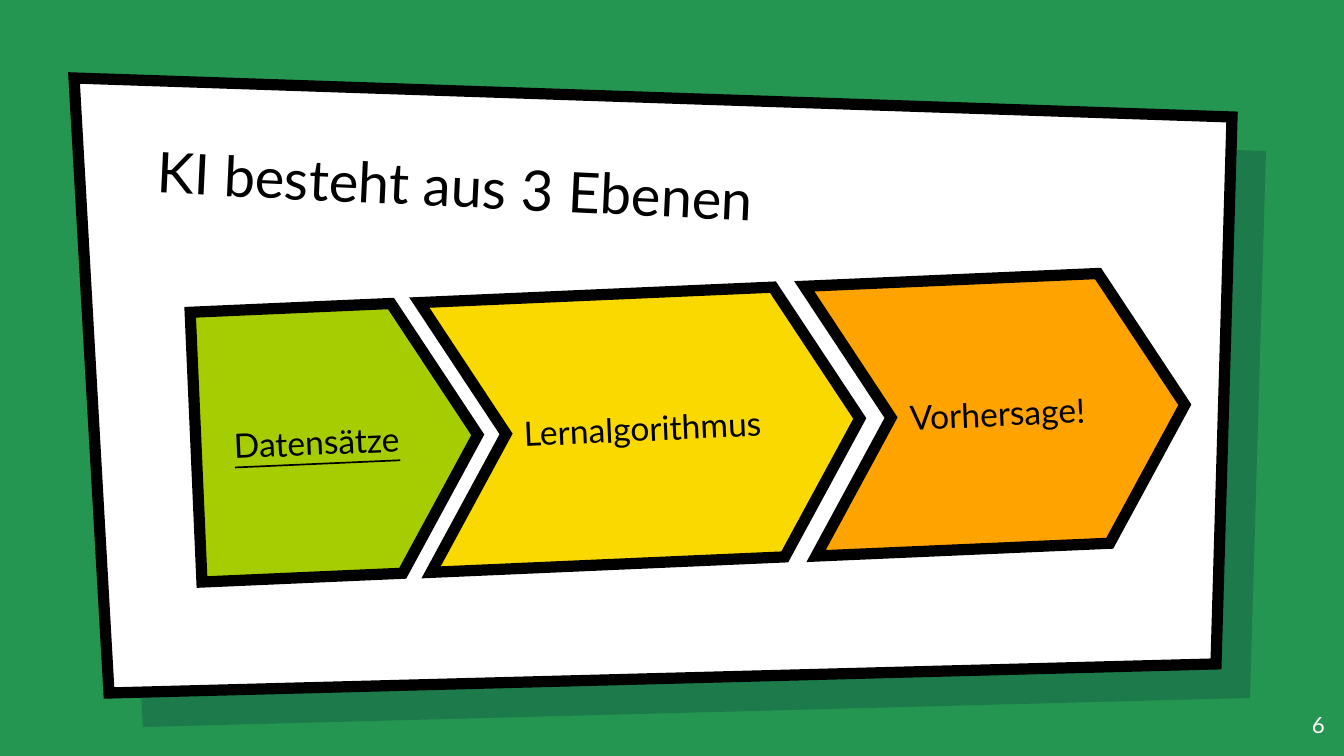
from lxml import etree
from pptx import Presentation
from pptx.dml.color import RGBColor
from pptx.enum.shapes import MSO_SHAPE
from pptx.enum.text import MSO_ANCHOR, MSO_AUTO_SIZE, PP_ALIGN
from pptx.oxml.ns import qn
from pptx.util import Pt

PENTAGON, CHEVRON = MSO_SHAPE.PENTAGON, MSO_SHAPE.CHEVRON
TOP, MIDDLE, BOTTOM = MSO_ANCHOR.TOP, MSO_ANCHOR.MIDDLE, MSO_ANCHOR.BOTTOM
LEFT, CENTER, RIGHT = PP_ALIGN.LEFT, PP_ALIGN.CENTER, PP_ALIGN.RIGHT

# Content
TITLE = "KI besteht aus 3 Ebenen"
PAGE = "6"
STEPS = [  # text, shape, box in px, fill, underlined
    ("Datensätze", PENTAGON, (196, 306, 282, 270), "green", True),
    ("Lernalgorithmus", CHEVRON, (425, 293, 435, 270), "yellow", False),
    ("Vorhersage!", CHEVRON, (810, 278, 375, 270), "orange", False),
]
PANEL = [(74, 78), (1232, 117), (1216, 664), (109, 693)]
SHADOW_OFFSET = 34

THEME = {
    "font": "Lato", "title": 30, "label": 18, "page": 12, "outline": 6,
    "background": "249651", "shadow": "001936", "white": "FFFFFF",
    "black": "000000", "green": "A6CD02", "yellow": "FAD900", "orange": "FFA300",
}
PX = 914400 / 134.4
INSET = 13
ARROW_TILT = -2.5
TITLE_TILT = 2.7
POINT_DEPTH = 0.3


def px(n):
    return round(n * PX)


def color(name):
    return RGBColor.from_string(THEME[name])


def paint(shape, fill, outlined=True):
    shape.shadow.inherit = False
    shape.fill.solid()
    shape.fill.fore_color.rgb = color(fill)
    if not outlined:
        shape.line.fill.background()
        return
    shape.line.color.rgb = color("black")
    shape.line.width = Pt(THEME["outline"])
    ln = shape.element.spPr.find(qn("a:ln"))
    etree.SubElement(ln, qn("a:miter"), lim="800000")


def write(shape, text, size, ink, align, anchor, underline=False):
    tf = shape.text_frame
    tf.text = text
    tf.word_wrap = True
    tf.auto_size = MSO_AUTO_SIZE.NONE
    tf.vertical_anchor = anchor
    tf.margin_left = tf.margin_right = tf.margin_top = tf.margin_bottom = px(INSET)
    p = tf.paragraphs[0]
    p.alignment = align
    font = p.runs[0].font
    font.name = THEME["font"]
    font.size = Pt(THEME[size])
    font.color.rgb = color(ink)
    if underline:
        font.underline = True


def add_panel(s, offset, fill, outlined):
    points = [(x + offset, y + offset) for x, y in PANEL]
    builder = s.shapes.build_freeform(*points[0], scale=PX)
    builder.add_line_segments(points[1:], close=True)
    panel = builder.convert_to_shape()
    paint(panel, fill, outlined)
    return panel


prs = Presentation()
prs.slide_width, prs.slide_height = px(1344), px(756)
s = prs.slides.add_slide(prs.slide_layouts[5])
s.background.fill.solid()
s.background.fill.fore_color.rgb = color("background")

# Tilted panel and its translucent shadow
shadow = add_panel(s, SHADOW_OFFSET, "shadow", False)
shadow_color = shadow.element.spPr.find(qn("a:solidFill"))[0]
etree.SubElement(shadow_color, qn("a:alpha"), val="22000")
add_panel(s, 0, "white", True)

# Title, moved in front of the panel
title = s.shapes.title
title.left, title.top, title.width, title.height = map(px, (144, 129, 1034, 112))
title.rotation = TITLE_TILT
write(title, TITLE, "title", "black", LEFT, BOTTOM)
title.element.getparent().append(title.element)

# Process arrows
for text, kind, box, fill, underline in STEPS:
    arrow = s.shapes.add_shape(kind, *map(px, box))
    arrow.adjustments[0] = POINT_DEPTH
    arrow.rotation = ARROW_TILT
    paint(arrow, fill)
    write(arrow, text, "label", "black", CENTER, MIDDLE, underline)

# Page number
page = s.shapes.add_textbox(*map(px, (1258, 698, 80, 58)))
write(page, PAGE, "page", "white", RIGHT, TOP)

prs.save("out.pptx")
